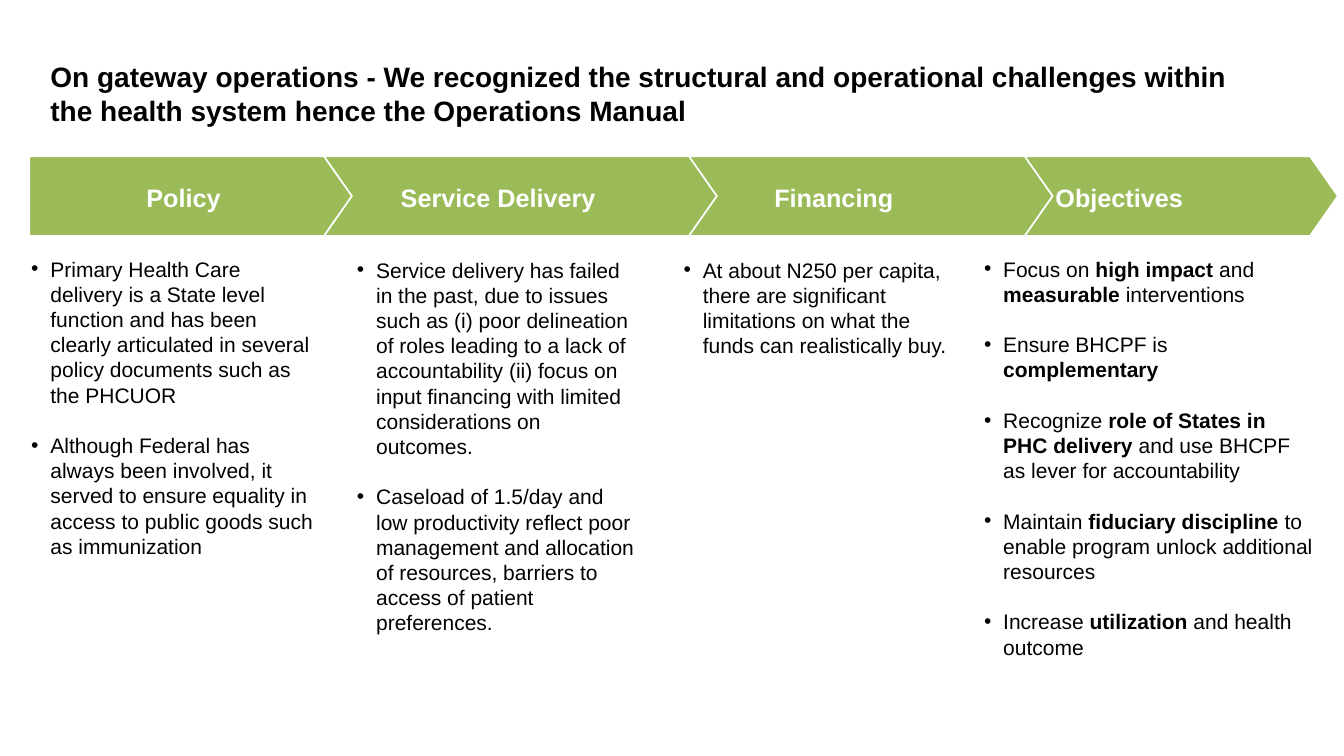
import dataclasses

import lxml.etree
import pptx
import pptx.dml.color
import pptx.enum.shapes
import pptx.enum.text
import pptx.oxml.ns
import pptx.util

SLIDE_WIDTH = pptx.util.Inches(13.33)
SLIDE_HEIGHT = pptx.util.Inches(7.5)
GRID_COLUMNS, GRID_ROWS = 1333, 750


@dataclasses.dataclass(frozen=True)
class Theme:
    font: str = "Arial"
    ink: str = "000000"
    paper: str = "FFFFFF"
    green: str = "9BBB59"
    title_size: int = 20
    banner_size: int = 18
    list_size: int = 15
    list_gap: int = 18
    outline: float = 1.25


@dataclasses.dataclass(frozen=True)
class Box:
    """A place on the slide, in grid columns and rows."""
    column: int
    row: int
    columns: int
    rows: int

    def place(self, shape):
        shape.left = round(SLIDE_WIDTH * self.column / GRID_COLUMNS)
        shape.top = round(SLIDE_HEIGHT * self.row / GRID_ROWS)
        shape.width = round(SLIDE_WIDTH * self.columns / GRID_COLUMNS)
        shape.height = round(SLIDE_HEIGHT * self.rows / GRID_ROWS)


@dataclasses.dataclass(frozen=True)
class Pillar:
    """One column: its banner, and its list with *bold* words starred."""
    heading: str
    banner: Box
    body: Box
    points: tuple


THEME = Theme()
TITLE = ("On gateway operations - We recognized the structural and operational "
         "challenges within the health system hence the Operations Manual")
TITLE_BOX = Box(37, 30, 1236, 125)
BANNER_ROW, BANNER_ROWS = 155, 79
LIST_ROW, LIST_ROWS = 249, 332

PILLARS = [
    Pillar(
        "Policy",
        Box(29, BANNER_ROW, 320, BANNER_ROWS),
        Box(21, LIST_ROW, 301, LIST_ROWS),
        ("Primary Health Care delivery is a State level function and has been "
         "clearly articulated in several policy documents such as the PHCUOR",
         "Although Federal has always been involved, it served to ensure "
         "equality in access to public goods such as immunization")),
    Pillar(
        "Service Delivery",
        Box(291, BANNER_ROW, 420, BANNER_ROWS),
        Box(344, LIST_ROW + 1, 301, LIST_ROWS),
        ("Service delivery has failed in the past, due to issues such as (i) "
         "poor delineation of roles leading to a lack of accountability (ii) "
         "focus on input financing with limited considerations on outcomes.",
         "Caseload of 1.5/day and low productivity reflect poor management and "
         "allocation of resources, barriers to access of patient preferences.")),
    Pillar(
        "Financing",
        Box(624, BANNER_ROW, 420, BANNER_ROWS),
        Box(668, LIST_ROW + 1, 301, LIST_ROWS),
        ("At about N250 per capita, there are significant limitations on what "
         "the funds can realistically buy.",)),
    Pillar(
        "Objectives",
        Box(907, BANNER_ROW, 420, BANNER_ROWS),
        Box(966, LIST_ROW, 346, LIST_ROWS),
        ("Focus on *high impact *and *measurable* interventions",
         "Ensure BHCPF is *complementary*",
         "Recognize *role of States in PHC delivery *and use BHCPF as lever "
         "for accountability",
         "Maintain *fiduciary discipline *to enable program unlock additional "
         "resources",
         "Increase *utilization *and health outcome")),
]


def add_span(para, text, size, color, bold):
    span = para.add_run()
    span.text = text
    span.font.name = THEME.font
    span.font.size = pptx.util.Pt(size)
    span.font.bold = bold
    span.font.color.rgb = pptx.dml.color.RGBColor.from_string(color)


def format_frame(frame, anchor, side, edge):
    """Wrap the text at a fixed size, with side and edge insets in inches."""
    frame.word_wrap = True
    frame.auto_size = pptx.enum.text.MSO_AUTO_SIZE.NONE
    frame.vertical_anchor = anchor
    frame.margin_left = frame.margin_right = pptx.util.Inches(side)
    frame.margin_top = frame.margin_bottom = pptx.util.Inches(edge)


def add_bullet(para):
    properties = para._p.get_or_add_pPr()
    indent = pptx.util.Inches(0.19)
    properties.set("marL", str(indent))
    properties.set("indent", str(-indent))
    for tag, name, value in (("a:buFont", "typeface", THEME.font),
                             ("a:buChar", "char", "•")):
        mark = lxml.etree.SubElement(properties, pptx.oxml.ns.qn(tag))
        mark.set(name, value)


def fill_title(title, box):
    box.place(title)
    format_frame(title.text_frame, pptx.enum.text.MSO_ANCHOR.MIDDLE, 0.13, 0.07)
    para = title.text_frame.paragraphs[0]
    para.alignment = pptx.enum.text.PP_ALIGN.LEFT
    add_span(para, TITLE, THEME.title_size, THEME.ink, True)


def add_banner(page, heading, box):
    banner = page.shapes.add_shape(
        pptx.enum.shapes.MSO_SHAPE.PENTAGON, 0, 0, 0, 0)
    box.place(banner)
    banner.adjustments[0] = 0.35
    banner.shadow.inherit = False
    banner.fill.solid()
    banner.fill.fore_color.rgb = pptx.dml.color.RGBColor.from_string(THEME.green)
    banner.line.color.rgb = pptx.dml.color.RGBColor.from_string(THEME.paper)
    banner.line.width = pptx.util.Pt(THEME.outline)
    format_frame(banner.text_frame, pptx.enum.text.MSO_ANCHOR.MIDDLE, 0.1, 0.1)
    para = banner.text_frame.paragraphs[0]
    para.alignment = pptx.enum.text.PP_ALIGN.CENTER
    para.line_spacing = 1.06
    add_span(para, heading, THEME.banner_size, THEME.paper, True)


def fill_list(body, points, box):
    box.place(body)
    frame = body.text_frame
    format_frame(frame, pptx.enum.text.MSO_ANCHOR.TOP, 0.1, 0.05)
    for number, point in enumerate(points):
        para = frame.add_paragraph() if number else frame.paragraphs[0]
        add_bullet(para)
        para.alignment = pptx.enum.text.PP_ALIGN.LEFT
        para.space_before = pptx.util.Pt(THEME.list_gap if number else 0)
        for part, words in enumerate(point.split("*")):
            if words:
                add_span(para, words, THEME.list_size, THEME.ink, part % 2 == 1)


def build_pillars_slide(deck):
    comparison = deck.slide_layouts.get_by_name("Comparison")
    page = deck.slides.add_slide(comparison)
    fill_title(page.shapes.title, TITLE_BOX)
    bodies = [holder for holder in page.placeholders
              if holder.placeholder_format.idx > 0]
    for body, pillar in zip(bodies, PILLARS):
        fill_list(body, pillar.points, pillar.body)
    # Right to left, so each arrow tip lies over the next banner.
    for pillar in reversed(PILLARS):
        add_banner(page, pillar.heading, pillar.banner)


def main():
    deck = pptx.Presentation()
    deck.slide_width = SLIDE_WIDTH
    deck.slide_height = SLIDE_HEIGHT
    build_pillars_slide(deck)
    deck.save("out.pptx")


if __name__ == "__main__":
    main()
